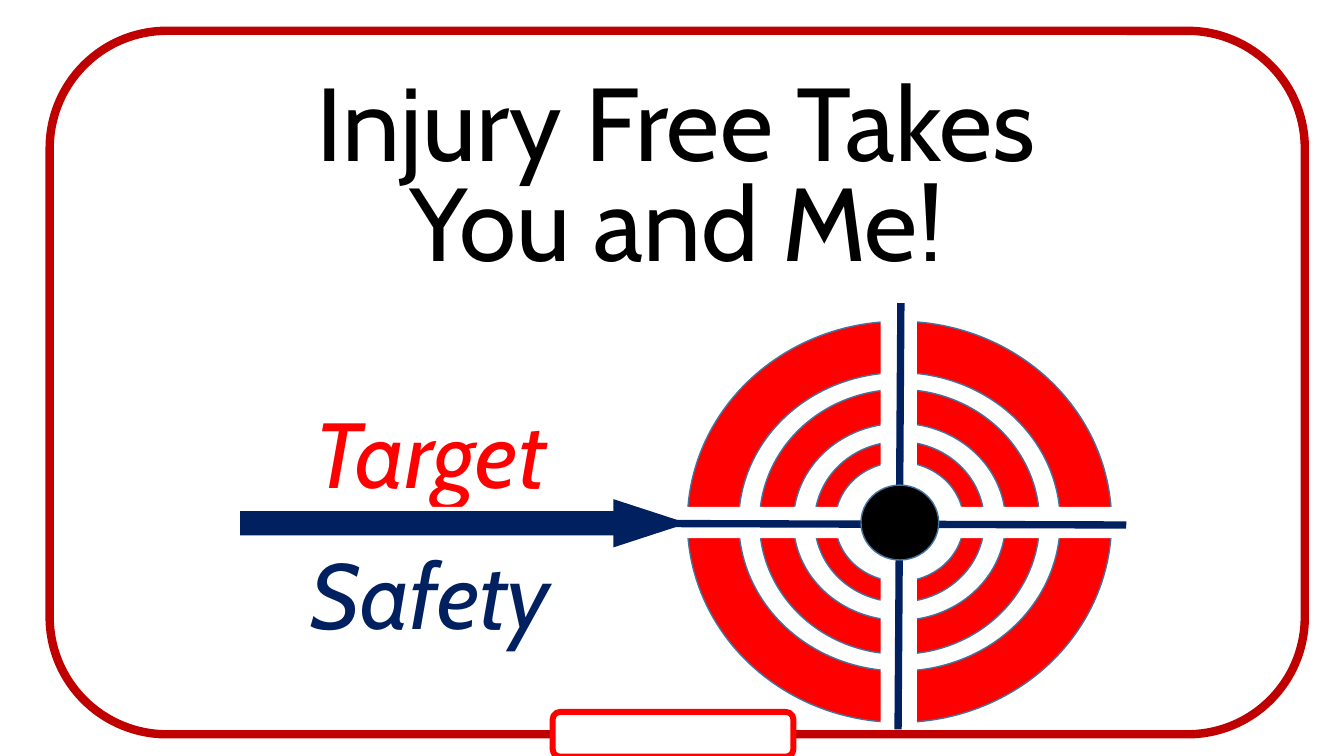
from dataclasses import dataclass

from lxml.etree import SubElement
from pptx import Presentation
from pptx.dml.color import RGBColor
from pptx.enum.shapes import MSO_CONNECTOR, MSO_SHAPE
from pptx.enum.text import MSO_ANCHOR, MSO_AUTO_SIZE, PP_ALIGN
from pptx.oxml.ns import qn
from pptx.util import Pt


@dataclass(frozen=True)
class Theme:
    """Colours, font and type sizes of the slide."""
    white: str = "FFFFFF"
    black: str = "000000"
    red: str = "FF0000"
    dark_red: str = "C00000"
    navy: str = "002060"
    outline: str = "43739E"
    font: str = "Cabin"
    title_size: float = 74
    label_size: float = 66
    outline_width: float = 1
    crosshair_width: float = 5.25


THEME = Theme()


def add_shape(slide, kind, box, fill=None, line=None, line_width=THEME.outline_width):
    """Add a preset shape with the given fill and outline."""
    shape = slide.shapes.add_shape(kind, *map(Pt, box))
    shape.shadow.inherit = False
    if fill:
        shape.fill.solid()
        shape.fill.fore_color.rgb = RGBColor.from_string(fill)
    else:
        shape.fill.background()
    if line:
        shape.line.color.rgb = RGBColor.from_string(line)
        shape.line.width = Pt(line_width)
    else:
        shape.line.fill.background()
    return shape


def add_crosshair(slide, start, end):
    """Add one navy line of the crosshair."""
    connector = slide.shapes.add_connector(
        MSO_CONNECTOR.STRAIGHT, *map(Pt, (*start, *end)))
    connector.line.color.rgb = RGBColor.from_string(THEME.navy)
    connector.line.width = Pt(THEME.crosshair_width)
    SubElement(connector.element.spPr, qn("a:effectLst"))


def write_text(shape, text, size, color, italic=False):
    """Write one centred, top-anchored paragraph into a shape."""
    frame = shape.text_frame
    frame.word_wrap = True
    frame.auto_size = MSO_AUTO_SIZE.NONE
    frame.vertical_anchor = MSO_ANCHOR.TOP
    frame.text = text
    paragraph = frame.paragraphs[0]
    paragraph.alignment = PP_ALIGN.CENTER
    font = paragraph.runs[0].font
    font.name = THEME.font
    font.size = Pt(size)
    font.italic = italic
    font.color.rgb = RGBColor.from_string(color)
    return paragraph


def add_frame(slide, box):
    """Draw the rounded border and the tab centred on its lower edge."""
    left, top, width, height = box
    tab_width, tab_height = 172, 32
    add_shape(slide, MSO_SHAPE.ROUNDED_RECTANGLE, box, line=THEME.dark_red, line_width=6)
    tab_box = (left + (width - tab_width) / 2 - 3, top + height - tab_height / 2,
               tab_width, tab_height)
    add_shape(slide, MSO_SHAPE.ROUNDED_RECTANGLE, tab_box, THEME.white, THEME.red, 4.25)


def add_title(slide, box):
    """Place and format the title placeholder."""
    title = slide.shapes.title
    title.left, title.top, title.width, title.height = map(Pt, box)
    paragraph = write_text(title, "Injury Free Takes You and Me!",
                           THEME.title_size, THEME.black)
    paragraph.line_spacing = 0.8


def add_rings(slide, box):
    """Draw the three concentric rings of the target."""
    left, top, width, height = box
    for scale in (1, 0.66, 0.4):
        ring_width, ring_height = width * scale, height * scale
        ring = add_shape(
            slide, MSO_SHAPE.DONUT,
            (left + (width - ring_width) / 2, top + (height - ring_height) / 2,
             ring_width, ring_height),
            THEME.red, THEME.outline)
        ring.adjustments[0] = 0.128


def add_labels(slide, box):
    """Stack the two italic labels above and below the arrow."""
    left, top, width, height = box
    labels = (("Target", THEME.red), ("Safety", THEME.navy))
    label_height = 87
    step = height - label_height
    for index, (text, color) in enumerate(labels):
        label = slide.shapes.add_textbox(
            *map(Pt, (left, top + index * step, width, label_height)))
        write_text(label, text, THEME.label_size, color, italic=True)


def add_sight(slide, box):
    """Cut the rings with white bands, then add crosshair, bullseye and arrow."""
    left, top, width, height = box
    center_x, center_y = left + 471, top + 157
    add_shape(slide, MSO_SHAPE.RECTANGLE, (left, center_y - 11.5, width, 22.5), THEME.white)
    add_crosshair(slide, (left + width, center_y + 1.5), (left, center_y - 0.5))
    add_shape(slide, MSO_SHAPE.RECTANGLE, (center_x - 13.5, top, 26, height), THEME.white)
    add_crosshair(slide, (center_x + 1, top), (center_x - 1, top + height))
    add_shape(slide, MSO_SHAPE.OVAL, (center_x - 27.5, center_y - 27, 55.5, 53.5),
              THEME.black, THEME.outline)
    arrow = add_shape(slide, MSO_SHAPE.RIGHT_ARROW,
                      (left, center_y - 17, 319.5, 34.5), THEME.navy)
    arrow.adjustments[0] = 0.5
    arrow.adjustments[1] = 1.533


def main():
    """Build and save the slide."""
    presentation = Presentation()
    presentation.slide_width, presentation.slide_height = Pt(960), Pt(540)
    slide = presentation.slides.add_slide(presentation.slide_layouts[5])
    add_frame(slide, (35.5, 22, 896.5, 502.5))
    add_title(slide, (177, 55, 612, 150.5))
    add_rings(slide, (491, 229.5, 303, 286.5))
    add_labels(slide, (183.5, 279.5, 247.5, 187.5))
    add_sight(slide, (171.5, 216.5, 633, 304.5))
    presentation.save("out.pptx")


if __name__ == "__main__":
    main()
